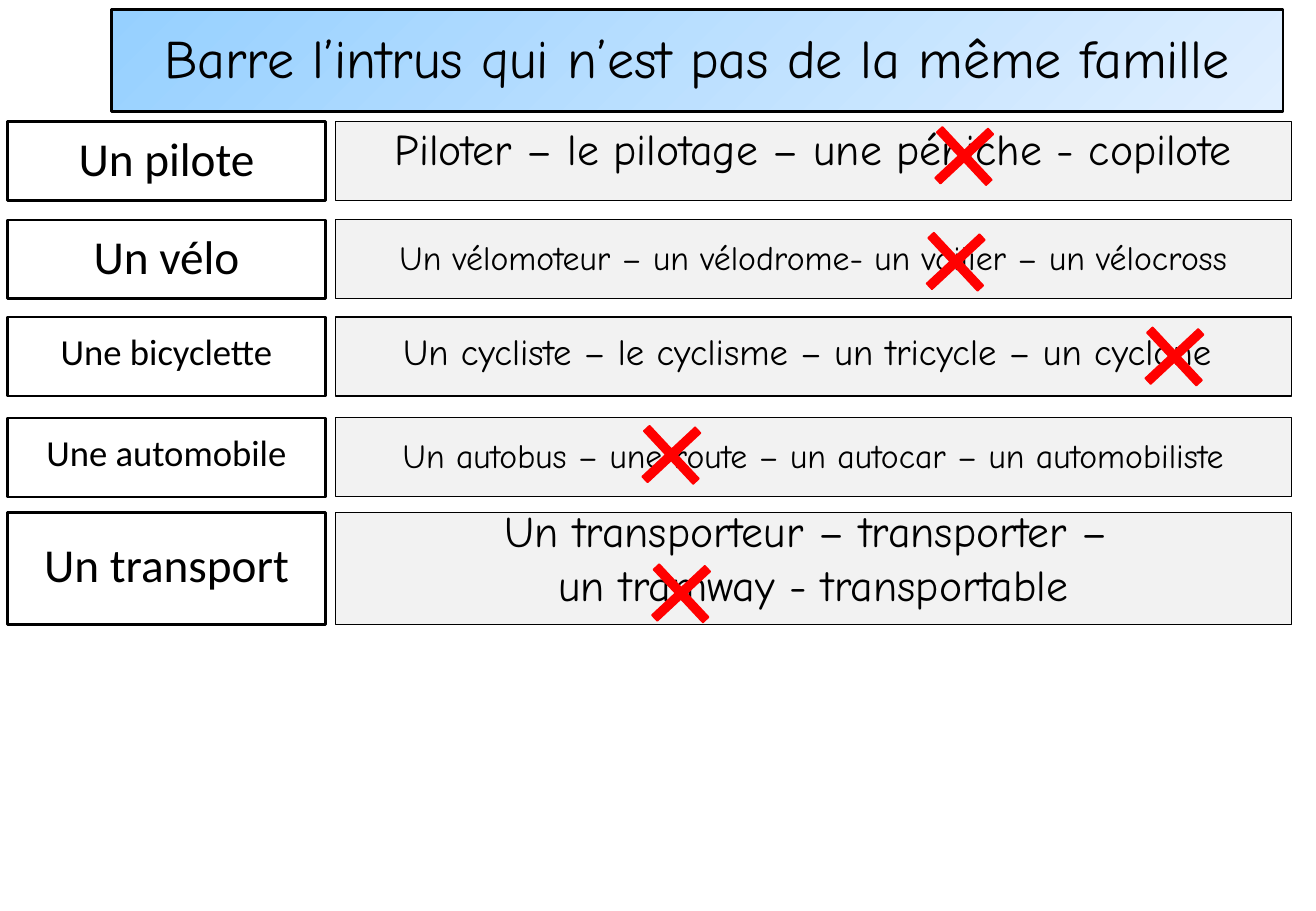
from pptx import Presentation
from pptx.dml.color import RGBColor
from pptx.enum import shapes, text
from pptx.util import Inches, Pt

THEME = {
    "black": RGBColor(0x00, 0x00, 0x00),
    "grey": RGBColor(0xF2, 0xF2, 0xF2),
    "red": RGBColor(0xFF, 0x00, 0x00),
    "title_from": RGBColor(0x96, 0xD0, 0xFF),
    "title_to": RGBColor(0xE0, 0xEF, 0xFF),
    "hand": "Comic Neue",
    "plain": "Calibri",
    "title": 32,
    "word": 28,
    "large": 25.9,
    "medium": 21.7,
    "small": 20,
}
MIDDLE, TOP = text.MSO_ANCHOR.MIDDLE, text.MSO_ANCHOR.TOP

prs = Presentation()
prs.slide_width, prs.slide_height = Inches(10.83), Inches(7.5)
s = prs.slides.add_slide(prs.slide_layouts[6])


def add_shape(kind, box, line_color, line_width, fill=None):
    sp = s.shapes.add_shape(kind, *[Inches(v) for v in box])
    sp.shadow.inherit = False
    if fill is None:
        sp.fill.background()
    else:
        sp.fill.solid()
        sp.fill.fore_color.rgb = fill
    sp.line.color.rgb = line_color
    sp.line.width = Pt(line_width)
    return sp


def add_box(box, lines, font, size, spacing, line_width, fill=None, anchor=MIDDLE, before=10):
    """Add a black-bordered rectangle with one centred paragraph per line."""
    sp = add_shape(shapes.MSO_SHAPE.RECTANGLE, box, THEME["black"], line_width, fill)
    tf = sp.text_frame
    tf.word_wrap = True
    tf.vertical_anchor = anchor
    paragraph_format = {
        "alignment": text.PP_ALIGN.CENTER,
        "line_spacing": spacing,
        "space_before": Pt(before),
    }
    for i, line in enumerate(lines):
        p = tf.paragraphs[0] if i == 0 else tf.add_paragraph()
        for name, value in paragraph_format.items():
            setattr(p, name, value)
        r = p.add_run()
        r.text = line
        r.font.name = font
        r.font.size = Pt(THEME[size])
        r.font.color.rgb = THEME["black"]
    return sp


title = add_box((0.92, 0.08, 9.64, 0.84), ["Barre l’intrus qui n’est pas de la même famille"],
                THEME["hand"], "title", 0.9, 1.5, before=0)
title.fill.gradient()
title.fill.gradient_angle = 315
for stop, color in zip(title.fill.gradient_stops, ("title_from", "title_to")):
    stop.color.rgb = THEME[color]

# top, height, (word, size, spacing), (family lines, size, spacing, anchor), cross position
rows = [
    (1.0, 0.65, ("Un pilote", "word", 0.9),
     (["Piloter – le pilotage – une péniche - copilote"], "large", 0.9, TOP), (7.53, 0.88)),
    (1.81, 0.65, ("Un vélo", "word", 0.9),
     (["Un vélomoteur – un vélodrome- un voilier – un vélocross"], "small", 0.9, MIDDLE),
     (7.46, 1.75)),
    (2.61, 0.65, ("Une bicyclette", "medium", 0.7),
     (["Un cycliste – le cyclisme – un tricycle – un cyclone "], "medium", 0.7, MIDDLE),
     (9.26, 2.53)),
    (3.44, 0.65, ("Une automobile", "medium", 0.7),
     (["Un autobus – une route – un autocar – un automobiliste"], "small", 0.9, MIDDLE),
     (5.12, 3.34)),
    (4.22, 0.92, ("Un transport", "word", 0.8),
     (["Un transporteur – transporter – ", "un tramway - transportable"], "large", 0.7, TOP),
     (5.2, 4.48)),
]

for top, height, (word, word_size, word_spacing), (family, size, spacing, anchor), cross in rows:
    add_box((0.06, top, 2.62, height), [word], THEME["plain"], word_size, word_spacing, 1.5)
    add_box((2.76, top, 7.87, height), family, THEME["hand"], size, spacing, 0.75,
            THEME["grey"], anchor)
    sp = add_shape(shapes.MSO_SHAPE.MATH_PLUS, (*cross, 0.81, 0.81), THEME["red"], 1, THEME["red"])
    sp.adjustments[0] = 0.08
    sp.rotation = 47

prs.save("out.pptx")
